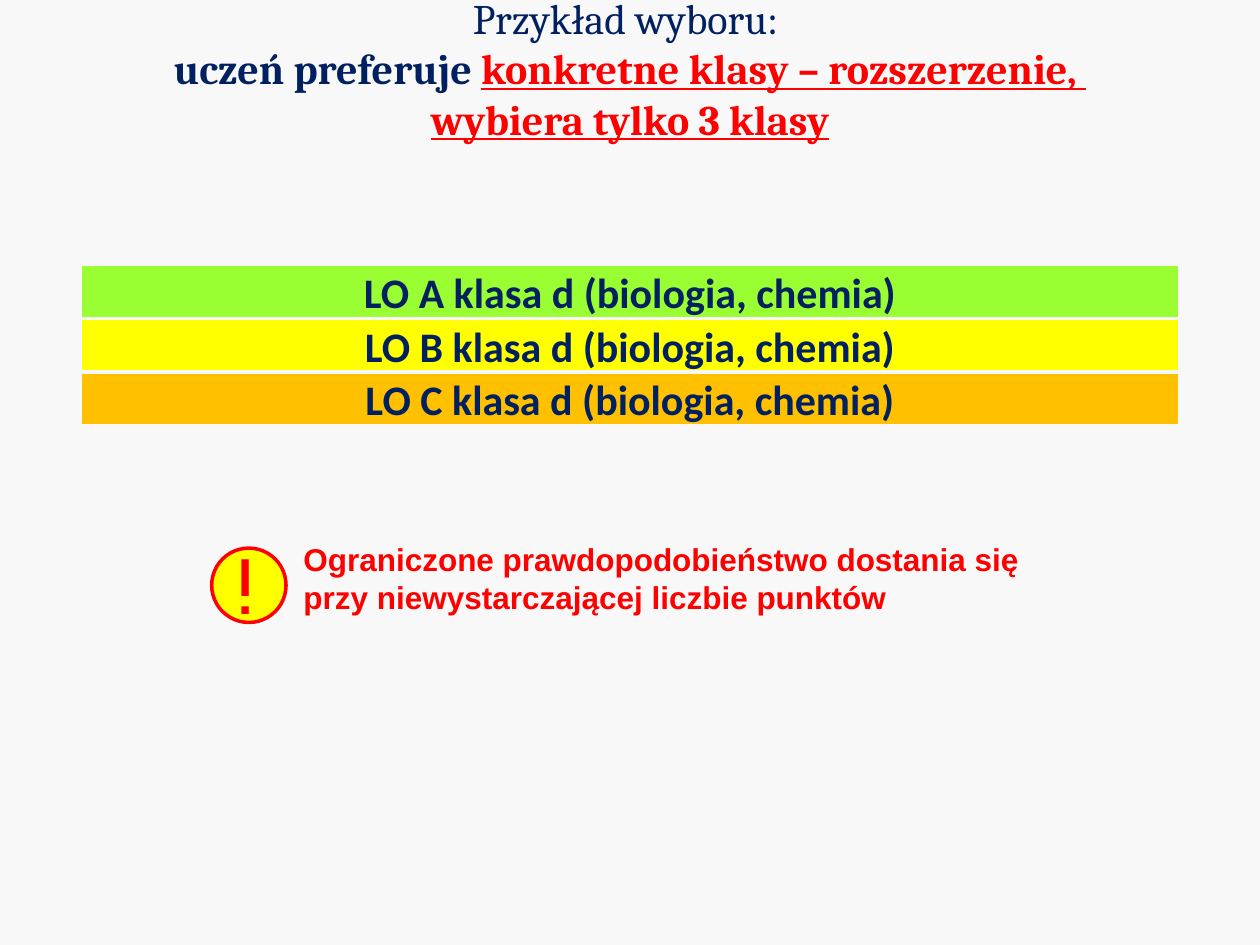
from pptx import Presentation
from pptx.dml.color import RGBColor as Rgb
from pptx.enum.shapes import MSO_SHAPE as Shape
from pptx.enum.text import MSO_ANCHOR as Anchor, PP_ALIGN as Align
from pptx.util import Inches, Pt

HUES = {
    "back": "F8F8F8",
    "navy": "002060",
    "red": "FF0000",
    "green": "99FF33",
    "yellow": "FFFF00",
    "orange": "FFC000",
}


def hue(name):
    """Return the named colour."""
    return Rgb.from_string(HUES[name])


def style(par, face, size, color, bold=None, align=None):
    """Set the font and alignment of a paragraph."""
    font = par.font
    font.name, font.size, font.bold = face, Pt(size), bold
    font.color.rgb = hue(color)
    par.alignment = align


def add_text(slide, x, y, w, h, wrap=False):
    """Add a text box and return its frame."""
    box = slide.shapes.add_textbox(Inches(x), Inches(y), Inches(w), Inches(h))
    box.text_frame.word_wrap = wrap
    return box.text_frame


def add_block(slide, kind, x, y, w, h, fill, line):
    """Add a flat filled shape with a two-point outline."""
    block = slide.shapes.add_shape(kind, Inches(x), Inches(y), Inches(w), Inches(h))
    block.shadow.inherit = False
    block.fill.solid()
    block.fill.fore_color.rgb = hue(fill)
    block.line.color.rgb = hue(line)
    block.line.width = Pt(2)
    return block


def add_title(slide, x, y, w, h):
    """Place the heading with its red underlined part."""
    frame = add_text(slide, x, y, w, h, wrap=True)
    intro, main = frame.paragraphs[0], frame.add_paragraph()
    intro.text = "Przykład wyboru: "
    style(intro, "Cambria", 24, "navy", align=Align.CENTER)
    style(main, "Cambria", 24, "navy", True, Align.CENTER)
    main.add_run().text = "uczeń preferuje "
    parts = ["konkretne klasy – rozszerzenie, ", "wybiera tylko 3 klasy"]
    for i, part in enumerate(parts):
        if i:
            main.add_line_break()
        run = main.add_run()
        run.text = part
        run.font.color.rgb = hue("red")
        run.font.underline = True


def add_bars(slide, x, y, w, h):
    """Stack one coloured bar per chosen class."""
    bars = [("A", "green"), ("B", "yellow"), ("C", "orange")]
    step = h / len(bars)
    for i, (school, fill) in enumerate(bars):
        bar = add_block(slide, Shape.RECTANGLE, x, y + i * step, w, step, fill, "back")
        frame = bar.text_frame
        frame.margin_left = frame.margin_right = 0
        frame.margin_top = frame.margin_bottom = 0
        frame.vertical_anchor = Anchor.MIDDLE
        par = frame.paragraphs[0]
        par.text = f"LO {school} klasa d (biologia, chemia)"
        style(par, "Calibri", 24, "navy", True, Align.CENTER)


def add_alert(slide, x, y, w, h):
    """Place the warning text beside its round sign."""
    frame = add_text(slide, x + 0.63, y + 0.02, w - 0.63, 0.71)
    frame.text = (
        "Ograniczone prawdopodobieństwo dostania się\n"
        "przy niewystarczającej liczbie punktów"
    )
    for par in frame.paragraphs:
        style(par, "Arial", 18, "red", True)
    add_block(slide, Shape.OVAL, x, y + 0.13, 0.59, 0.59, "yellow", "red")
    mark = add_text(slide, x + 0.1, y, 0.39, h).paragraphs[0]
    mark.text = "!"
    style(mark, "Roboto Slab", 44, "red")


def main():
    """Build and save the slide."""
    deck = Presentation()
    deck.slide_width, deck.slide_height = Inches(10), Inches(7.5)
    slide = deck.slides.add_slide(deck.slide_layouts[6])
    slide.background.fill.solid()
    slide.background.fill.fore_color.rgb = hue("back")
    add_title(slide, 0, -0.11, 10, 0.78)
    add_bars(slide, 0.64, 2.1, 8.72, 1.28)
    add_alert(slide, 1.68, 4.22, 6.64, 0.84)
    deck.save("out.pptx")


if __name__ == "__main__":
    main()
